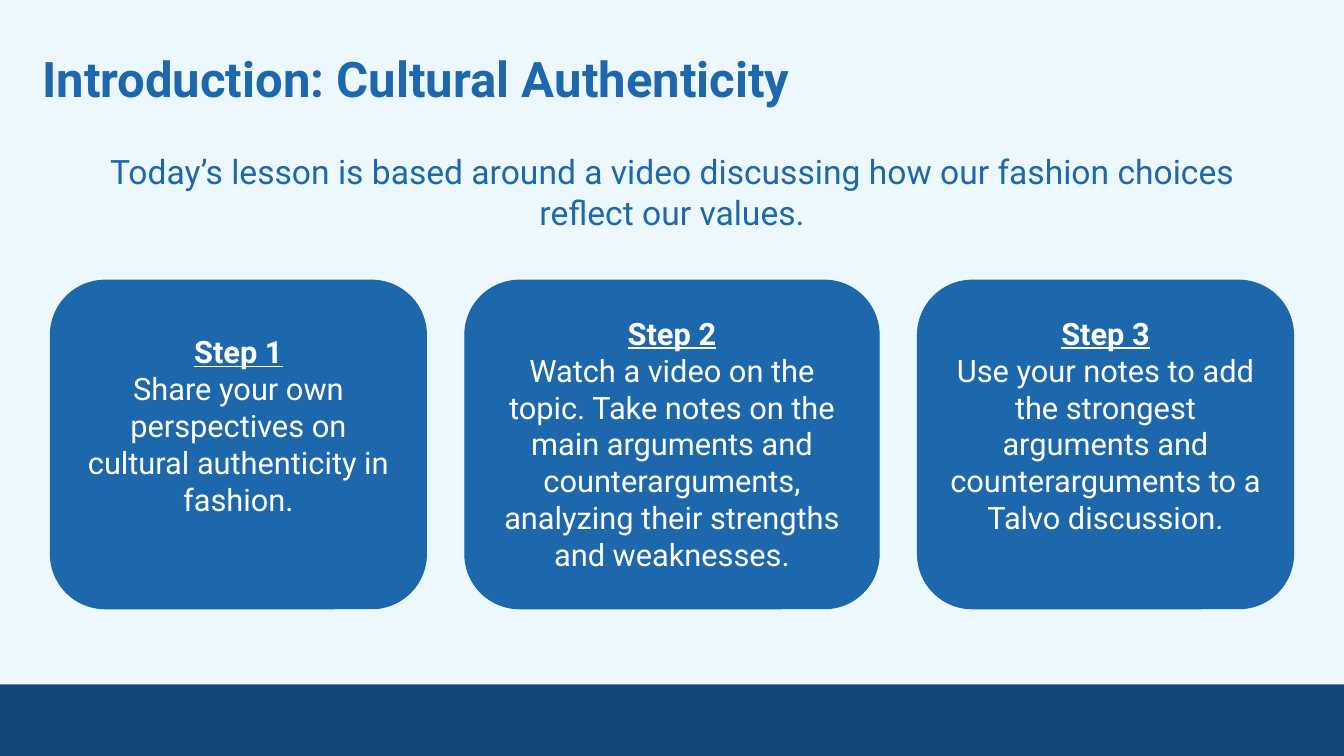
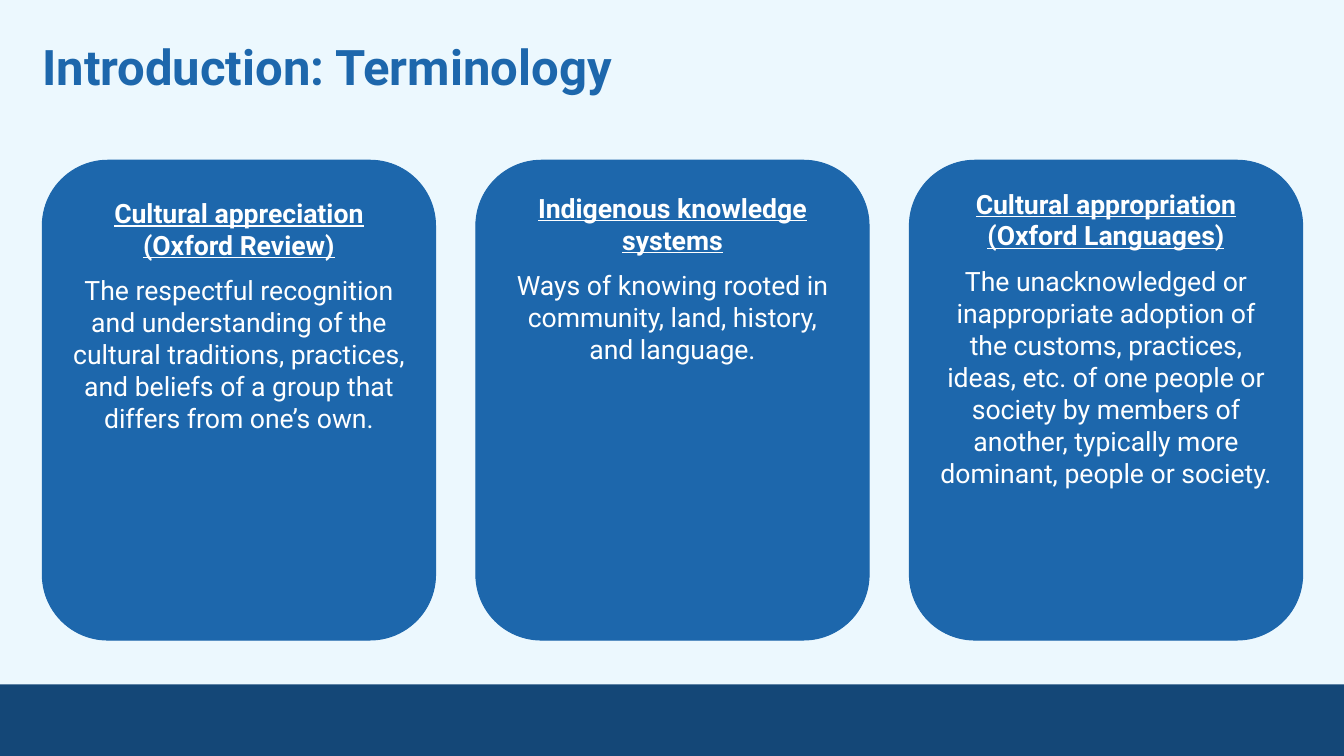
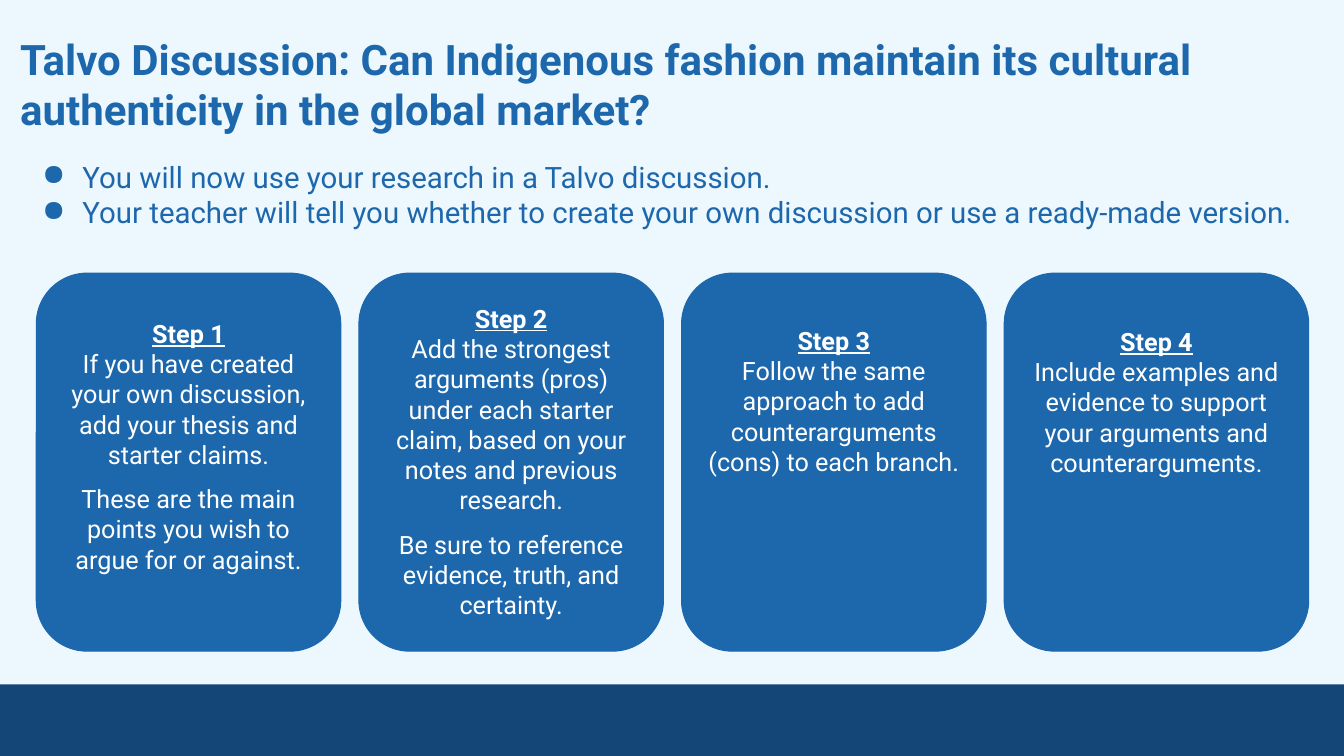
from lxml import etree
from pptx import Presentation
from pptx.dml.color import RGBColor
from pptx.enum import shapes, text
from pptx.oxml import ns
from pptx.util import Inches, Pt

FONT = "Roboto"
BACKGROUND, BLUE, NAVY, WHITE = "ECF8FE", "1D67AC", "144777", "FFFFFF"
LEFT, CENTER = text.PP_ALIGN.LEFT, text.PP_ALIGN.CENTER


def paint(target, color, line=None):
    """Fill a shape and outline it, or leave it without an outline."""
    target.shadow.inherit = False
    target.fill.solid()
    target.fill.fore_color.rgb = RGBColor.from_string(color)
    if line:
        target.line.color.rgb = RGBColor.from_string(line)
        target.line.width = Pt(0.75)
    else:
        target.line.fill.background()


def write(shape, lines, size, color, align=LEFT, inset=0.1, top=None,
          heading=False, gaps=(), bullet=None):
    """Write one paragraph per line; gaps holds the points before each one."""
    frame = shape.text_frame
    frame.text = "\n".join(lines)
    frame.word_wrap = True
    frame.vertical_anchor = text.MSO_ANCHOR.TOP
    frame.margin_left = frame.margin_right = frame.margin_bottom = Inches(inset)
    frame.margin_top = Inches(inset if top is None else top)
    for index, paragraph in enumerate(frame.paragraphs):
        paragraph.alignment = align
        if index < len(gaps) and gaps[index]:
            paragraph.space_before = Pt(gaps[index])
        if bullet:
            properties = paragraph._p.get_or_add_pPr()
            properties.set("marL", str(Inches(0.5)))
            properties.set("indent", str(Inches(-0.4)))
            mark = etree.SubElement(properties, ns.qn("a:buChar"))
            mark.set("char", bullet)
        for run in paragraph.runs:
            run.font.name = FONT
            run.font.size = Pt(size)
            run.font.color.rgb = RGBColor.from_string(color)
            run.font.bold = heading and index == 0
            run.font.underline = heading and index == 0 and color == WHITE


# Each card: top inset, heading, then body paragraphs
slides = [
    {
        "title": "Introduction: Cultural Authenticity",
        "title_box": (0.29, 0.35, 12.19, 0.86), "title_size": 35,
        "intro": ["Today’s lesson is based around a video discussing how our "
                  "fashion choices reflect our values."],
        "intro_box": (0.57, 1.4, 12.19, 1.3), "intro_size": 24,
        "intro_align": CENTER, "bullet": None,
        "left": 0.5, "top": 2.78, "height": 3.26, "gap": 0.38,
        "widths": [3.73, 4.11, 3.73], "size": 22, "gaps": (),
        "cards": [
            (0.36, "Step 1", "Share your own perspectives on cultural "
             "authenticity in fashion."),
            (0.18, "Step 2", "Watch a video on the topic. Take notes on the "
             "main arguments and counterarguments, analyzing their strengths "
             "and weaknesses."),
            (0.18, "Step 3", "Use your notes to add the strongest arguments "
             "and counterarguments to a Talvo discussion."),
        ],
    },
    {
        "title": "Introduction: Terminology",
        "title_box": (0.29, 0.23, 12.19, 0.86), "title_size": 35,
        "intro": [],
        "left": 0.42, "top": 1.59, "height": 4.76, "gap": 0.4,
        "widths": [3.9] * 3, "size": 19, "gaps": (0, 10),
        "cards": [
            (0.17, "Cultural appreciation (Oxford Review)",
             "The respectful recognition and understanding of the cultural "
             "traditions, practices, and beliefs of a group that differs from "
             "one’s own."),
            (0.12, "Indigenous knowledge systems",
             "Ways of knowing rooted in community, land, history, and "
             "language."),
            (0.08, "Cultural appropriation (Oxford Languages)",
             "The unacknowledged or inappropriate adoption of the customs, "
             "practices, ideas, etc. of one people or society by members of "
             "another, typically more dominant, people or society."),
        ],
    },
    {
        "title": "Talvo Discussion: Can Indigenous fashion maintain its "
                 "cultural authenticity in the global market?",
        "title_box": (0.07, 0.2, 13.26, 1.28), "title_size": 30,
        "intro": ["You will now use your research in a Talvo discussion.",
                  "Your teacher will tell you whether to create your own "
                  "discussion or use a ready-made version."],
        "intro_box": (0.22, 1.48, 12.9, 0.91), "intro_size": 21,
        "intro_align": LEFT, "bullet": "●",
        "left": 0.36, "top": 2.71, "height": 3.75, "gap": 0.18,
        "widths": [3.02] * 4, "size": 18, "gaps": (0, 0, 10),
        "cards": [
            (0.3, "Step 1", "If you have created your own discussion, add "
             "your thesis and starter claims.",
             "These are the main points you wish to argue for or against."),
            (0.15, "Step 2", "Add the strongest arguments (pros) under each "
             "starter claim, based on your notes and previous research.",
             "Be sure to reference evidence, truth, and certainty."),
            (0.37, "Step 3", "Follow the same approach to add "
             "counterarguments (cons) to each branch."),
            (0.38, "Step 4", "Include examples and evidence to support your "
             "arguments and counterarguments."),
        ],
    },
]

# Presentation and shared background
presentation = Presentation()
presentation.slide_width, presentation.slide_height = Inches(13.33), Inches(7.5)
background = presentation.slide_master.background.fill
background.solid()
background.fore_color.rgb = RGBColor.from_string(BACKGROUND)

for content in slides:
    slide = presentation.slides.add_slide(presentation.slide_layouts[6])

    # Footer band
    band = slide.shapes.add_shape(
        shapes.MSO_SHAPE.RECTANGLE,
        Inches(-0.02), Inches(6.79), Inches(13.37), Inches(0.71))
    paint(band, NAVY)

    # Title
    title = slide.shapes.add_textbox(*map(Inches, content["title_box"]))
    write(title, [content["title"]], content["title_size"], BLUE,
          inset=0.13, heading=True)

    # Introductory text
    if content["intro"]:
        intro = slide.shapes.add_textbox(*map(Inches, content["intro_box"]))
        write(intro, content["intro"], content["intro_size"], BLUE,
              align=content["intro_align"], bullet=content["bullet"])

    # Row of cards
    left = content["left"]
    for width, (inset_top, *lines) in zip(content["widths"], content["cards"]):
        card = slide.shapes.add_shape(
            shapes.MSO_SHAPE.ROUNDED_RECTANGLE, Inches(left),
            Inches(content["top"]), Inches(width), Inches(content["height"]))
        paint(card, BLUE, line=BLUE)
        write(card, lines, content["size"], WHITE, align=CENTER,
              top=inset_top, heading=True, gaps=content["gaps"])
        left += width + content["gap"]

presentation.save("out.pptx")
